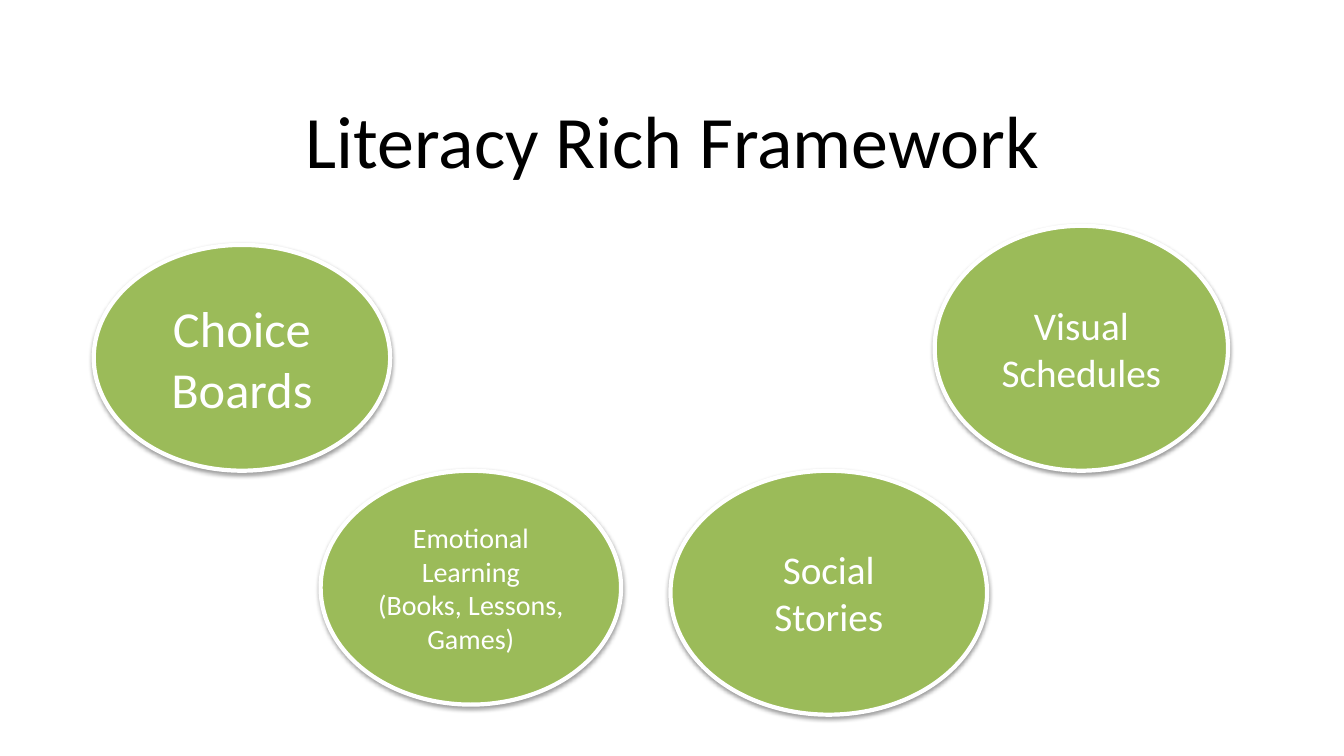
import pptx
import pptx.dml.color
import pptx.enum.shapes
import pptx.enum.text
import pptx.oxml
import pptx.oxml.ns
import pptx.util

PX = 9144  # EMU in one px, 100 px to the inch
GREEN, WHITE, BLACK = "9BBB59", "FFFFFF", "000000"

SHADOW = (
    f'<a:effectLst {pptx.oxml.ns.nsdecls("a")}>'
    '<a:outerShdw blurRad="40000" dist="20000" dir="5400000" rotWithShape="0">'
    f'<a:srgbClr val="{BLACK}"><a:alpha val="38000"/></a:srgbClr>'
    '</a:outerShdw></a:effectLst>'
)

# Box in px, text size, text
BUBBLES = [
    ((927, 224, 291, 243), 28, "Visual Schedules"),
    ((665, 467, 314, 242), 28, "Social Stories"),
    ((318, 467, 298, 232), 20, "Emotional Learning\n(Books, Lessons, Games)"),
    ((93, 243, 294, 224), 36, "Choice Boards"),
]


def rgb(value):
    return pptx.dml.color.RGBColor.from_string(value)


def emu(box):
    return [pptx.util.Emu(length * PX) for length in box]


def set_text(sp, text, size, color):
    tf = sp.text_frame
    tf.word_wrap = True
    tf.vertical_anchor = pptx.enum.text.MSO_ANCHOR.MIDDLE
    tf.text = text
    for p in tf.paragraphs:
        p.alignment = pptx.enum.text.PP_ALIGN.CENTER
        for r in p.runs:
            r.font.name = "Calibri"
            r.font.size = pptx.util.Pt(size)
            r.font.color.rgb = rgb(color)


def add_title(s, box, text):
    set_text(s.shapes.add_textbox(*emu(box)), text, 52.8, BLACK)


def add_bubble(s, box, size, text):
    sp = s.shapes.add_shape(pptx.enum.shapes.MSO_SHAPE.OVAL, *emu(box))
    sp.fill.solid()
    sp.fill.fore_color.rgb = rgb(GREEN)
    sp.line.color.rgb = rgb(WHITE)
    sp.line.width = pptx.util.Pt(3)
    # Soft shadow straight below
    sp._element.spPr.append(pptx.oxml.parse_xml(SHADOW))
    set_text(sp, text, size, WHITE)


def main():
    prs = pptx.Presentation()
    prs.slide_width, prs.slide_height = emu((1333, 750))
    s = prs.slides.add_slide(prs.slide_layouts[6])

    # Heading
    add_title(s, (67, 75, 1200, 125), "Literacy Rich Framework")

    # Framework parts
    for box, size, text in BUBBLES:
        add_bubble(s, box, size, text)

    prs.save("out.pptx")


if __name__ == "__main__":
    main()
